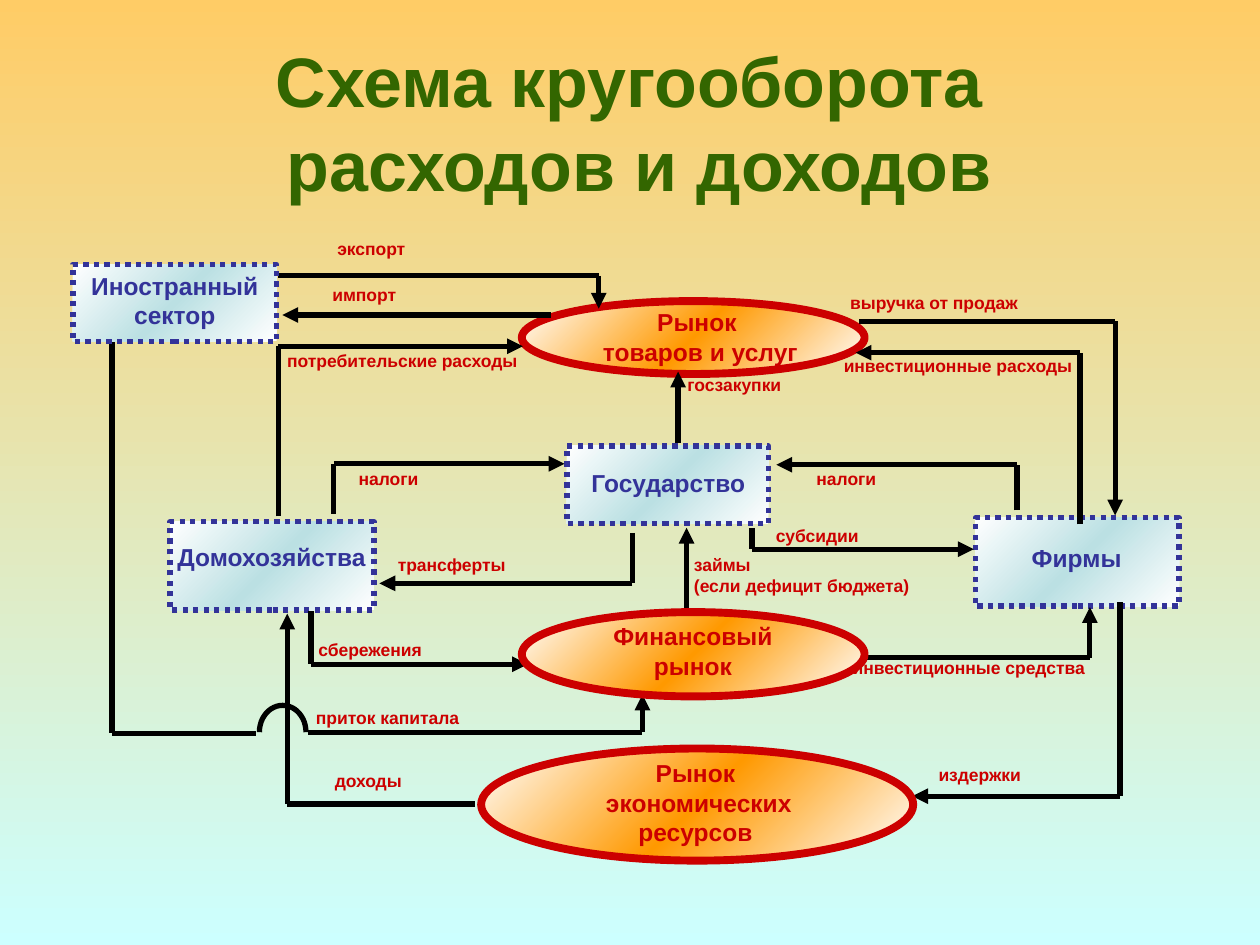
"""Build a slide showing the circular flow of spending and income."""
from copy import deepcopy
from itertools import pairwise
from math import cos, pi, sin

from lxml.etree import SubElement
from pptx import Presentation
from pptx.dml.color import RGBColor
from pptx.enum.dml import MSO_LINE
from pptx.enum.shapes import MSO_CONNECTOR, MSO_SHAPE
from pptx.enum.text import MSO_ANCHOR, PP_ALIGN
from pptx.oxml.ns import qn
from pptx.util import Cm, Pt

TITLE = "Схема кругооборота \vрасходов и доходов"
TITLE_BOX = (1.45, 0.86, 22.86, 3.18)

BACK_NODES = [
    ("market", (10.52, 6.07, 6.91, 1.47), "Рынок\n товаров и услуг", (11.61, 6.07, 4.88, 1.45)),
    ("sector", (11.43, 8.99, 4.06, 1.57), "Государство", (11.25, 9.32, 4.45, 0.84)),
    ("sector", (3.43, 10.52, 4.11, 1.78), "Домохозяйства", (3.25, 10.8, 4.45, 0.84)),
    ("sector", (19.66, 10.44, 4.11, 1.78), "Фирмы", (19.48, 10.82, 4.45, 0.84)),
]
FRONT_NODES = [
    ("sector", (1.47, 5.33, 4.11, 1.55), "Иностранный сектор", None),
    ("market", (10.52, 12.34, 6.91, 1.7), "Финансовый рынок", (11.53, 12.4, 4.88, 1.45)),
    ("market", (9.7, 15.09, 8.71, 2.26), "Рынок\n экономических ресурсов", (11.58, 15.16, 4.88, 2.03)),
]

FLOWS = [
    ("выручка от продаж", (16.89, 5.77, 6.48, 0.99), [(17.32, 6.48), (22.48, 6.48), (22.48, 10.39)]),
    ("издержки", (18.67, 15.27, 3.45, 0.86), [(22.58, 12.14), (22.58, 16.05), (18.39, 16.05)]),
    ("доходы", (6.5, 15.39, 3.45, 0.86), [(9.58, 16.21), (5.79, 16.21), (5.79, 12.37)]),
    ("потребительские расходы", (5.54, 6.93, 5.69, 1.5), [(5.61, 10.41), (5.61, 6.98), (10.54, 6.98)]),
    ("госзакупки", (13.61, 7.42, 4.19, 1.5), [(13.67, 8.94), (13.67, 7.49)]),
    ("займы\n(если дефицит бюджета)", (13.74, 11.05, 6.32, 1.32), [(13.84, 12.32), (13.84, 10.64)]),
    ("сбережения", (6.17, 12.75, 2.67, 0.69), [(6.27, 12.32), (6.27, 13.39), (10.64, 13.39)]),
    ("инвестиционные средства", (16.94, 13.13, 5.56, 0.69), [(17.27, 13.26), (21.97, 13.26), (21.97, 12.24)]),
    ("инвестиционные расходы", (16.76, 7.04, 5.47, 1.4), [(21.77, 10.57), (21.77, 7.11), (17.25, 7.11)]),
    ("налоги", (6.98, 9.3, 1.83, 0.81), [(6.73, 10.36), (6.73, 9.35), (11.38, 9.35)]),
    ("налоги", (16.21, 9.3, 4.29, 0.89), [(20.5, 10.29), (20.5, 9.37), (15.65, 9.37)]),
    ("трансферты", (7.77, 11.05, 2.92, 0.64), [(12.75, 10.74), (12.75, 11.76), (7.65, 11.76)]),
    ("субсидии", (15.39, 10.46, 5.21, 0.86), [(15.16, 10.64), (15.16, 11.07), (19.63, 11.07)]),
    ("приток капитала", (6.12, 14.12, 4.19, 0.61), [(6.2, 14.76), (12.95, 14.76), (12.95, 14)]),
    ("экспорт", (6.55, 4.67, 4.83, 0.99), [(5.61, 5.56), (12.07, 5.56), (12.07, 6.22)]),
    ("импорт", (6.45, 5.61, 2.08, 0.99), [(11.1, 6.35), (5.69, 6.35)]),
]
CAPITAL_ROUTE = [(2.26, 6.83), (2.26, 14.78), (5.16, 14.78)]
BRIDGE = {"center": (5.7, 14.76), "radii": (0.47, 0.54), "steps": 24}

NODE_STYLES = {
    "market": {"shape": MSO_SHAPE.OVAL, "middle": "FF9900", "color": "CC0000", "width": 4.5, "dash": None},
    "sector": {"shape": MSO_SHAPE.RECTANGLE, "middle": "BBE0E3", "color": "333399", "width": 3,
               "dash": MSO_LINE.ROUND_DOT},
}


def rgb(value):
    """Return a colour from its hex string."""
    return RGBColor.from_string(value)


def lengths(values):
    """Convert centimetre numbers to slide lengths."""
    return [Cm(value) for value in values]


def write(shape, text, size, color, align=PP_ALIGN.CENTER, anchor=MSO_ANCHOR.TOP):
    """Fill a shape with bold text."""
    frame = shape.text_frame
    for name, value in {"word_wrap": True, "vertical_anchor": anchor, "text": text}.items():
        setattr(frame, name, value)
    for para in frame.paragraphs:
        para.alignment = align
        for name, value in {"name": "Arial", "size": Pt(size), "bold": True}.items():
            setattr(para.font, name, value)
        for span in para.runs:
            for name, value in {"name": "Arial", "size": Pt(size), "bold": True}.items():
                setattr(span.font, name, value)
            span.font.color.rgb = rgb(color)


def set_stops(fill, colors, angle):
    """Spread colours evenly along a gradient that already has its stops."""
    fill.gradient_angle = angle
    for index, (stop, color) in enumerate(zip(fill.gradient_stops, colors)):
        stop.position = index / (len(colors) - 1)
        stop.color.rgb = rgb(color)


def set_line(line, color, width):
    """Give a line its colour and width."""
    line.color.rgb = rgb(color)
    line.width = Pt(width)


def add_node(page, kind, place, text, text_place):
    """Draw a market or sector with its name."""
    style = NODE_STYLES[kind]
    node = page.shapes.add_shape(style["shape"], *lengths(place))
    node.shadow.inherit = False
    node.fill.gradient()
    stops = node._element.spPr.find(qn("a:gradFill")).find(qn("a:gsLst"))
    stops.append(deepcopy(stops[0]))
    set_stops(node.fill, ["FFFFFF", style["middle"], "FFFFFF"], 315)
    set_line(node.line, style["color"], style["width"])
    if style["dash"]:
        node.line.dash_style = style["dash"]
    box = page.shapes.add_textbox(*lengths(text_place)) if text_place else node
    write(box, text, 14, style["color"])


def add_route(page, points, arrow=True):
    """Join points with straight lines, the last one with an arrowhead."""
    for start, end in pairwise(points):
        link = page.shapes.add_connector(MSO_CONNECTOR.STRAIGHT, *lengths(start + end))
        set_line(link.line, "000000", 3)
        SubElement(link._element.spPr, qn("a:effectLst"))
    if arrow:
        SubElement(link.line._get_or_add_ln(), qn("a:tailEnd"), type="triangle")


def add_bridge(page):
    """Draw the half circle where the capital route crosses the income route."""
    (center_x, center_y), (radius_x, radius_y), steps = BRIDGE.values()
    points = [
        (Cm(center_x - radius_x * cos(pi * step / steps)), Cm(center_y - radius_y * sin(pi * step / steps)))
        for step in range(steps + 1)
    ]
    builder = page.shapes.build_freeform(*points[0])
    builder.add_line_segments(points[1:], close=False)
    bridge = builder.convert_to_shape()
    bridge.shadow.inherit = False
    bridge.fill.background()
    set_line(bridge.line, "000000", 3)


def main():
    """Assemble and save the deck."""
    deck = Presentation()
    deck.slide_width, deck.slide_height = Cm(25.4), Cm(19.05)
    page = deck.slides.add_slide(deck.slide_layouts[6])
    backdrop = page.background.fill
    backdrop.gradient()
    set_stops(backdrop, ["FFCC66", "CCFFFF"], 270)
    title = page.shapes.add_textbox(*lengths(TITLE_BOX))
    write(title, TITLE, 40, "336600", anchor=MSO_ANCHOR.MIDDLE)
    for node in BACK_NODES:
        add_node(page, *node)
    for label, place, points in FLOWS:
        add_route(page, points)
        write(page.shapes.add_textbox(*lengths(place)), label, 10, "CC0000", PP_ALIGN.LEFT)
    add_route(page, CAPITAL_ROUTE, arrow=False)
    add_bridge(page)
    for node in FRONT_NODES:
        add_node(page, *node)
    deck.save("out.pptx")


if __name__ == "__main__":
    main()
